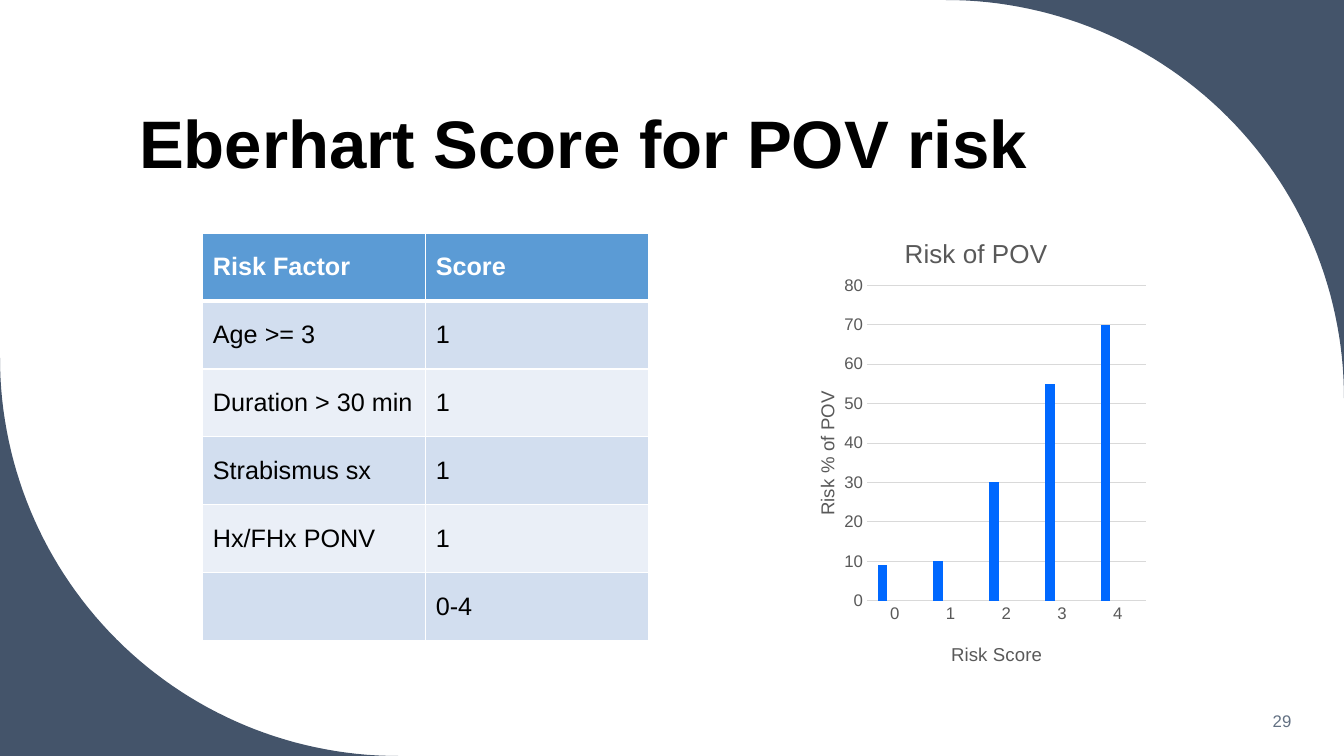
import math
from dataclasses import dataclass

import pptx
import pptx.chart.data
import pptx.dml.color
import pptx.enum.chart
import pptx.enum.text
import pptx.oxml
import pptx.oxml.ns
import pptx.util

Pt = pptx.util.Pt
RGB = pptx.dml.color.RGBColor
qn = pptx.oxml.ns.qn
Anchor = pptx.enum.text.MSO_ANCHOR
Align = pptx.enum.text.PP_ALIGN

NAVY = RGB(0x44, 0x54, 0x6A)
BLACK = RGB(0, 0, 0)
WHITE = RGB(255, 255, 255)
HEAD = RGB(0x5B, 0x9B, 0xD5)
BANDS = (RGB(0xD2, 0xDE, 0xEF), RGB(0xEA, 0xEF, 0xF7))
SLATE = RGB(0x63, 0x71, 0x83)
GREY = RGB(0x59, 0x59, 0x59)
PALE = RGB(0xD9, 0xD9, 0xD9)
BLUE = RGB(0x00, 0x68, 0xFF)
MIST = RGB(0xDA, 0xE5, 0xEF)
FONT = "Arial"
WIDE, HIGH = 960, 540
ROUND = 284.4


@dataclass
class Corner:
    x: float
    y: float
    sign: int


@dataclass
class Factor:
    name: str
    score: str


@dataclass
class Series:
    name: str
    vals: tuple
    color: RGB


CORNERS = (Corner(WIDE, 0, 1), Corner(0, HIGH, -1))
FACTORS = (
    Factor("Risk Factor", "Score"),
    Factor("Age >= 3", "1"),
    Factor("Duration > 30 min", "1"),
    Factor("Strabismus sx", "1"),
    Factor("Hx/FHx PONV", "1"),
    Factor("", "0-4"),
)
SERIES = (
    Series("Series 1", (9, 10, 30, 55, 70), BLUE),
    Series("Series 2", (None,) * 5, MIST),
    Series("Series 3", (None,) * 5, SLATE),
)


def style(font, size: float, color: RGB, bold: bool = False) -> None:
    font.name, font.size, font.bold = FONT, Pt(size), bold
    font.color.rgb = color


def write(frame, text: str, *, size: float, color: RGB, bold: bool = False,
          align=Align.LEFT, space: float = 1.0) -> None:
    para = frame.paragraphs[0]
    para.alignment, para.line_spacing = align, space
    run = para.add_run()
    run.text = text
    style(run.font, size, color, bold)


def draw_corner(slide, corner: Corner) -> None:
    mid_x = corner.x - corner.sign * ROUND
    mid_y = corner.y + corner.sign * ROUND
    arc = []
    for step in range(61):
        turn = math.radians(step * 1.5)
        arc.append((Pt(mid_x + corner.sign * ROUND * math.sin(turn)),
                    Pt(mid_y - corner.sign * ROUND * math.cos(turn))))
    form = slide.shapes.build_freeform(Pt(corner.x), Pt(corner.y))
    form.add_line_segments(arc, close=True)
    shape = form.convert_to_shape()
    shape.shadow.inherit = False
    shape.fill.solid()
    shape.fill.fore_color.rgb = NAVY
    shape.line.fill.background()


def edge(cell, **widths: float) -> None:
    """Set white cell borders, one width for each of L, R, T and B."""
    for spot, (side, width) in enumerate(widths.items()):
        cell._tc.get_or_add_tcPr().insert(spot, pptx.oxml.parse_xml(
            f'<a:ln{side} {pptx.oxml.ns.nsdecls("a")} w="{Pt(width)}">'
            f'<a:solidFill><a:srgbClr val="{WHITE}"/></a:solidFill></a:ln{side}>'))


def draw_table(slide, rows: tuple) -> None:
    tall = 48.5
    table = slide.shapes.add_table(len(rows), 2, Pt(144.9), Pt(166.6),
                                   Pt(318.4), Pt(tall * len(rows))).table
    for col in table.columns:
        col.width = Pt(159.2)
    for i, item in enumerate(rows):
        table.rows[i].height = Pt(tall)
        for j, text in enumerate((item.name, item.score)):
            cell = table.cell(i, j)
            cell.vertical_anchor = Anchor.MIDDLE
            cell.fill.solid()
            cell.fill.fore_color.rgb = BANDS[(i - 1) % 2] if i else HEAD
            edge(cell, L=1, R=1, T=3 if i == 1 else 1, B=1 if i else 3)
            if text:
                write(cell.text_frame, text, size=18,
                      color=BLACK if i else WHITE, bold=i == 0)


def place(node, spot: int, **parts: float) -> None:
    """Give a chart part a fixed place, in shares of the chart."""
    for old in node.findall(qn("c:layout")):
        node.remove(old)
    modes = "".join(f'<c:{key}Mode val="edge"/>' for key in "xy")
    sizes = "".join(f'<c:{key} val="{val}"/>' for key, val in parts.items())
    inner = '<c:layoutTarget val="inner"/>' if "w" in parts else ""
    node.insert(spot, pptx.oxml.parse_xml(
        f'<c:layout {pptx.oxml.ns.nsdecls("c")}><c:manualLayout>'
        f'{inner}{modes}{sizes}</c:manualLayout></c:layout>'))


def label(title, text: str, size: float, x: float, y: float) -> None:
    write(title.text_frame, text, size=size, color=GREY, align=Align.CENTER)
    place(title.element, 1, x=x, y=y)


def draw_chart(slide, series: tuple) -> None:
    data = pptx.chart.data.CategoryChartData()
    data.categories = [str(n) for n in range(5)]
    for item in series:
        data.add_series(item.name, item.vals)
    kind = pptx.enum.chart.XL_CHART_TYPE.COLUMN_CLUSTERED
    chart = slide.shapes.add_chart(kind, Pt(561.6), Pt(148.3), Pt(262.1),
                                   Pt(338.4), data).chart
    style(chart.font, 10, BLACK)
    chart.has_legend = False
    chart.has_title = True
    label(chart.chart_title, "Risk of POV", 18.6, 0.31, 0.05)
    place(chart.element.find(".//" + qn("c:plotArea")), 0,
          x=0.22, y=0.164, w=0.76, h=0.666)

    # Columns
    plot = chart.plots[0]
    plot.gap_width, plot.overlap, plot.vary_by_categories = 219, -27, False
    for bars, item in zip(plot.series, series):
        bars.format.fill.solid()
        bars.format.fill.fore_color.rgb = item.color

    # Axes
    across, up = chart.category_axis, chart.value_axis
    for axis in (across, up):
        axis.major_tick_mark = pptx.enum.chart.XL_TICK_MARK.NONE
        style(axis.tick_labels.font, 12, GREY)
    label(across.axis_title, "Risk Score", 13.3, 0.44, 0.91)
    label(up.axis_title, "Risk % of POV", 13.3, 0.07, 0.38)
    up.axis_title.text_frame._txBody.bodyPr.set("rot", "-5400000")
    up.minimum_scale, up.maximum_scale, up.major_unit = 0, 80, 10
    up.format.line.fill.background()
    up.has_major_gridlines = True
    for line in (across.format.line, up.major_gridlines.format.line):
        line.color.rgb, line.width = PALE, Pt(0.75)


def main() -> None:
    deck = pptx.Presentation()
    deck.slide_width, deck.slide_height = Pt(WIDE), Pt(HIGH)
    slide = deck.slides.add_slide(deck.slide_layouts[5])

    # Rounded corners
    for corner in CORNERS:
        draw_corner(slide, corner)

    # Title
    title = slide.shapes.title
    title.left, title.top = Pt(92.2), Pt(30.2)
    title.width, title.height = Pt(769.7), Pt(104.4)
    title.text_frame.vertical_anchor = Anchor.BOTTOM
    write(title.text_frame, "Eberhart Score for POV risk", size=48,
          color=BLACK, bold=True, space=0.9)

    # Scores and risk
    draw_table(slide, FACTORS)
    draw_chart(slide, SERIES)

    # Slide number
    box = slide.shapes.add_textbox(Pt(799.2), Pt(500.4), Pt(130.3), Pt(28.8))
    box.text_frame.word_wrap = True
    box.text_frame.vertical_anchor = Anchor.MIDDLE
    write(box.text_frame, "29", size=12, color=SLATE, align=Align.RIGHT)

    deck.save("out.pptx")


if __name__ == "__main__":
    main()
